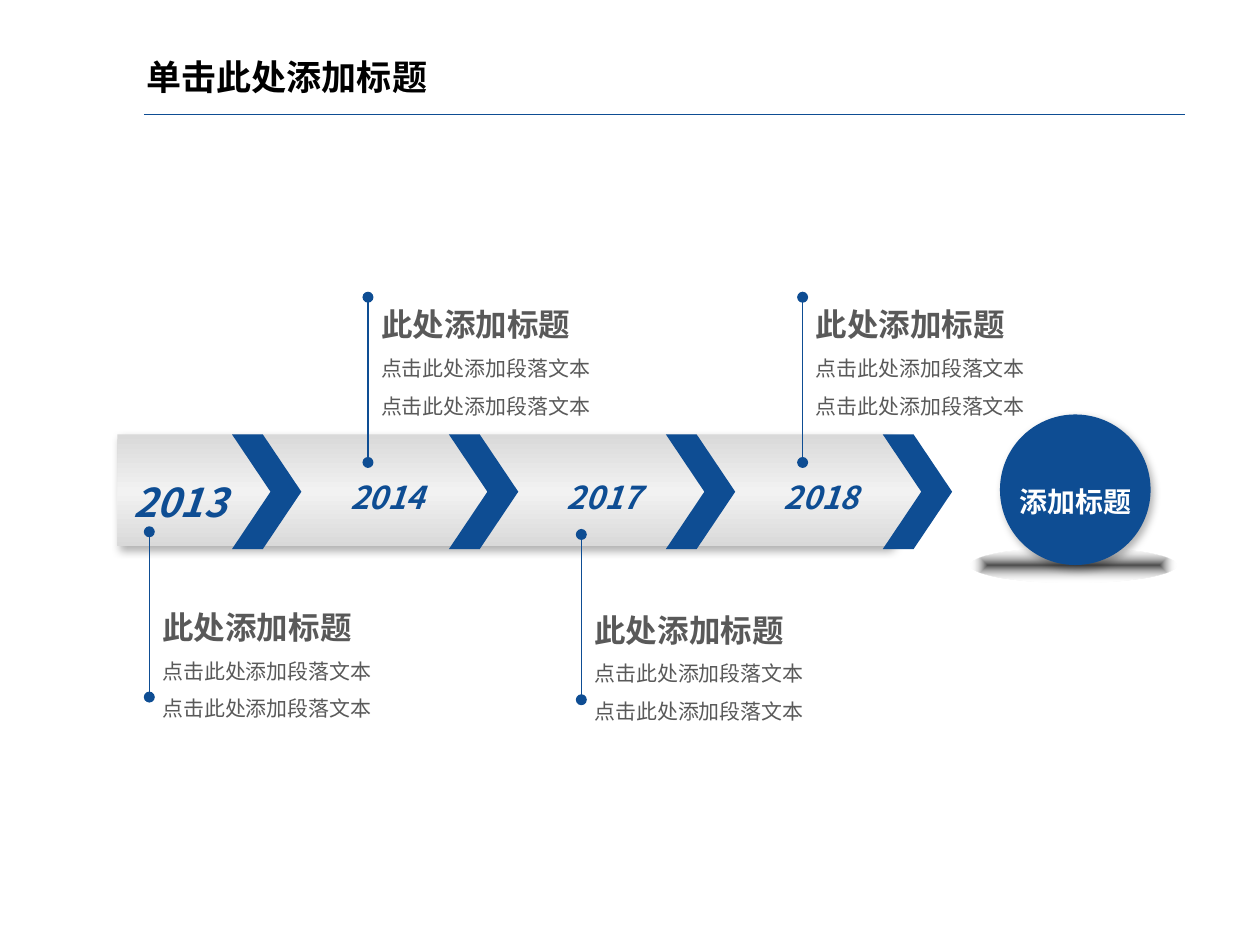
from lxml.etree import SubElement
from pptx import Presentation
from pptx.dml.color import RGBColor
from pptx.enum.shapes import MSO_CONNECTOR, MSO_SHAPE
from pptx.enum.text import MSO_AUTO_SIZE, PP_ALIGN
from pptx.oxml import parse_xml
from pptx.oxml.ns import nsdecls, qn
from pptx.util import Inches, Pt

BLUE = RGBColor(0x0E, 0x4D, 0x93)
GRAY = RGBColor(0x59, 0x59, 0x59)
BLACK = RGBColor(0, 0, 0)
WHITE = RGBColor(255, 255, 255)
FONT = "Noto Sans CJK SC"

TITLE = "单击此处添加标题"
GOAL = "添加标题"
NOTE_LINES = ["此处添加标题", "点击此处添加段落文本", "点击此处添加段落文本"]
NOTE_SIZES = [17, 11.3, 11.3]
YEARS = [("2013", 21.4, 0.95, 0.46), ("2014", 17, 0.79, 0.39),
         ("2017", 17, 0.79, 0.39), ("2018", 17, 0.79, 0.39)]
NOTES = [(1.12, 3.99, 0.38, 2.5), (2.76, 2.23, -0.13, 2.36),
         (4.36, 4.01, 0.38, 2.18), (6.02, 2.23, -0.13, 2.25)]

STEP = 1.627
YEAR_LEFT, YEAR_TOP = 0.9, 3.54
CHEVRON_LEFT, CHEVRON_TOP = 1.74, 3.26
PIN_LENGTH = 1.24

BAR_FILL = [(0, "D9D9D9", 100), (51, "F2F2F2", 100), (100, "D9D9D9", 100)]
BAR_DIRECTION = '<a:lin ang="5400000" scaled="0"/>'
GROUND_FILL = [(0, "000000", 70), (100, "FFFFFF", 0)]
GROUND_DIRECTION = ('<a:path path="shape"><a:fillToRect l="50000" t="50000" '
                    'r="50000" b="50000"/></a:path>')


def add_shape(slide, kind, left, top, width, height, adjustment=None):
    shape = slide.shapes.add_shape(kind, Inches(left), Inches(top), Inches(width), Inches(height))
    shape.shadow.inherit = False
    shape.fill.solid()
    shape.fill.fore_color.rgb = BLUE
    shape.line.fill.background()
    if adjustment is not None:
        shape.adjustments[0] = adjustment
    return shape


def set_gradient(shape, stops, direction):
    stop_xml = "".join(
        f'<a:gs pos="{position * 1000}"><a:srgbClr val="{color}">'
        f'<a:alpha val="{opacity * 1000}"/></a:srgbClr></a:gs>'
        for position, color, opacity in stops)
    gradient = parse_xml(f'<a:gradFill {nsdecls("a")} rotWithShape="1">'
                         f'<a:gsLst>{stop_xml}</a:gsLst>{direction}</a:gradFill>')
    properties = shape.element.spPr
    properties.replace(properties.find(qn("a:solidFill")), gradient)


def set_shadow(shape):
    effects = shape.element.spPr.find(qn("a:effectLst"))
    effects.append(parse_xml(
        f'<a:outerShdw {nsdecls("a")} blurRad="{Pt(4.5)}" dist="{Pt(2.6)}" dir="{53 * 60000}" '
        'algn="tl" rotWithShape="0"><a:srgbClr val="000000"><a:alpha val="30000"/>'
        '</a:srgbClr></a:outerShdw>'))


def add_line(slide, start_x, start_y, end_x, end_y, dots=False):
    line = slide.shapes.add_connector(MSO_CONNECTOR.STRAIGHT, Inches(start_x), Inches(start_y),
                                      Inches(end_x), Inches(end_y))
    line.line.color.rgb = BLUE
    line.line.width = Pt(0.75)
    if dots:
        outline = line.line._get_or_add_ln()
        for end in ("a:headEnd", "a:tailEnd"):
            SubElement(outline, qn(end), type="oval")
    SubElement(line.element.spPr, qn("a:effectLst"))


def add_text(slide, left, top, width, height, lines, sizes, color,
             wrap=True, italic=False, spacing=None, align=PP_ALIGN.LEFT):
    box = slide.shapes.add_textbox(Inches(left), Inches(top), Inches(width), Inches(height))
    frame = box.text_frame
    frame.text = "\n".join(lines)
    frame.word_wrap = wrap
    frame.auto_size = MSO_AUTO_SIZE.SHAPE_TO_FIT_TEXT
    for index, (paragraph, size) in enumerate(zip(frame.paragraphs, sizes)):
        paragraph.alignment = align
        if spacing:
            paragraph.line_spacing = spacing
        for run in paragraph.runs:
            font = run.font
            font.name = FONT
            font.size = Pt(size)
            font.bold = index == 0
            font.italic = italic
            font.color.rgb = color
            SubElement(run._r.get_or_add_rPr(), qn("a:ea"), typeface=FONT)


def main():
    presentation = Presentation()
    presentation.slide_width = Inches(9.45)
    presentation.slide_height = Inches(7.09)
    slide = presentation.slides.add_slide(presentation.slide_layouts[6])

    add_line(slide, 1.08, 0.86, 8.89, 0.86)
    add_text(slide, 1, 0.37, 7.89, 0.42, [TITLE], [18.9], BLACK)

    ground = add_shape(slide, MSO_SHAPE.OVAL, 7.28, 4.11, 1.54, 0.26)
    set_gradient(ground, GROUND_FILL, GROUND_DIRECTION)
    set_shadow(add_shape(slide, MSO_SHAPE.OVAL, 7.5, 3.11, 1.13, 1.13))
    bar = add_shape(slide, MSO_SHAPE.PENTAGON, 0.88, 3.26, 6.11, 0.84, 0.4)
    set_gradient(bar, BAR_FILL, BAR_DIRECTION)
    set_shadow(bar)

    for index, (year, size, width, height) in enumerate(YEARS):
        offset = index * STEP
        add_shape(slide, MSO_SHAPE.CHEVRON, CHEVRON_LEFT + offset, CHEVRON_TOP, 0.52, 0.86, 0.555)
        add_text(slide, YEAR_LEFT + offset, YEAR_TOP, width, height, [year], [size], BLUE,
                 wrap=False, italic=True)

    for left, top, text_offset, width in NOTES:
        add_line(slide, left, top, left, top + PIN_LENGTH, dots=True)
        add_text(slide, left, top + text_offset, width, 1.1, NOTE_LINES, NOTE_SIZES, GRAY,
                 spacing=1.5)

    add_text(slide, 7.54, 3.46, 1.05, 0.48, [GOAL], [15.1], WHITE,
             wrap=False, spacing=1.5, align=PP_ALIGN.CENTER)
    presentation.save("out.pptx")


if __name__ == "__main__":
    main()
